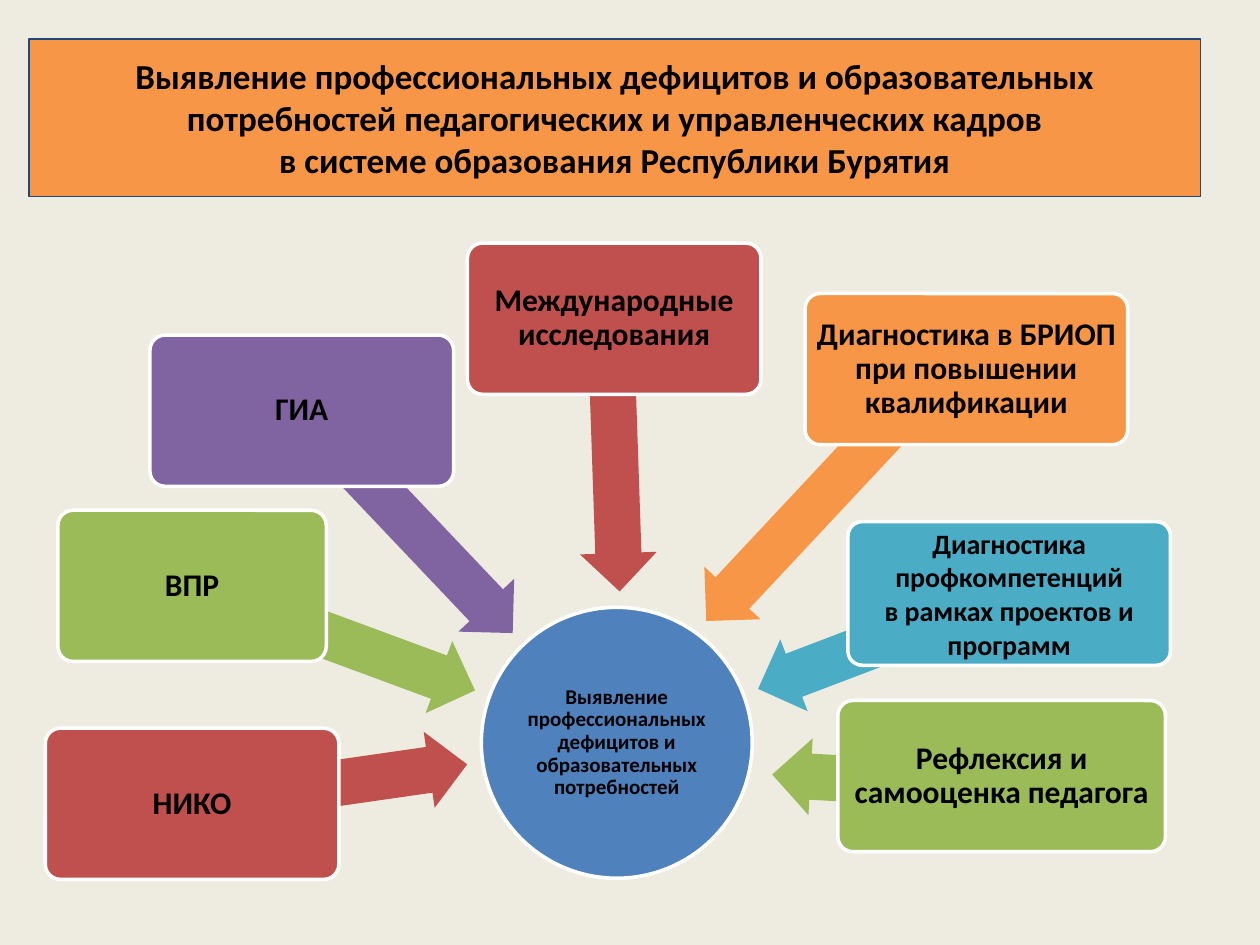
import math
from typing import NamedTuple

import pptx
import pptx.dml.color
import pptx.enum.shapes
import pptx.enum.text
import pptx.util

SHAPES = pptx.enum.shapes.MSO_SHAPE
CELL = 0.1
COLUMNS, ROWS = 100, 75
ARROW_WIDTH = 6.1
RING_RADIUS = 12

BLACK, WHITE, NAVY, CREAM = "000000", "FFFFFF", "1F497D", "EEECE1"
BLUE, RED, GREEN = "4F81BD", "C0504D", "9BBB59"
PURPLE, TEAL, ORANGE = "8064A2", "4BACC6", "F79646"

TITLE = (
    "Выявление профессиональных дефицитов и образовательных потребностей "
    "педагогических и управленческих кадров\vв системе образования Республики Бурятия"
)
HUB_TEXT = "Выявление профессиональных дефицитов и образовательных потребностей"


class Box(NamedTuple):
    """A rectangle measured in grid cells."""

    left: float
    top: float
    width: float
    height: float

    def inside(self, parent):
        """Return this box moved to the origin of its parent."""
        return self._replace(left=parent.left + self.left, top=parent.top + self.top)

    def center(self):
        """Return the middle point of the box."""
        return self.left + self.width / 2, self.top + self.height / 2


class Source(NamedTuple):
    """A card feeding the hub, with the shift and turn of its arrow."""

    text: str
    box: Box
    color: str
    format: dict = {}
    shift: tuple = (0, 0)
    turn: float = 0


TITLE_BOX = Box(2.3, 3.1, 93, 12.5)
DIAGRAM_BOX = Box(3.6, 19.3, 89.3, 50.5)
HUB_BOX = Box(34.6, 28.9, 21.5, 21.5)

SOURCES = [
    Source("НИКО", Box(0, 38.5, 23.3, 12), RED),
    Source("ВПР", Box(1, 21.2, 21.3, 12), GREEN),
    Source("ГИА", Box(8.3, 7.3, 24.1, 12), PURPLE),
    Source(
        "Диагностика профкомпетенций\nв рамках проектов и программ",
        Box(63.7, 22.1, 25.6, 11.4), TEAL,
        {"size": 16, "spacing": 1.0, "inset": 0.03},
    ),
    Source(
        "Диагностика в БРИОП при повышении квалификации",
        Box(60.3, 4, 25.6, 12), ORANGE, shift=(-1.1, -0.9),
    ),
    Source("Международные исследования", Box(33.5, 0, 23.3, 12), RED, turn=-1.6),
    Source(
        "Рефлексия и самооценка педагога",
        Box(62.9, 36.3, 26, 12), GREEN, shift=(0.4, 1.2), turn=-1.8,
    ),
]


def rgb(value):
    """Turn a hex string into a colour."""
    return pptx.dml.color.RGBColor.from_string(value)


def cells(value):
    """Turn grid cells into a length."""
    return pptx.util.Inches(value * CELL)


def set_attributes(target, values):
    """Set each named attribute of an object."""
    for name, value in values.items():
        setattr(target, name, value)


def add_shape(slide, kind, box, color, line=None, adjustments=()):
    """Add a filled preset shape, with an outline if a colour and width are given."""
    shape = slide.shapes.add_shape(kind, *map(cells, box))
    shape.shadow.inherit = False
    shape.fill.solid()
    shape.fill.fore_color.rgb = rgb(color)
    if line:
        shape.line.color.rgb = rgb(line[0])
        shape.line.width = pptx.util.Pt(line[1])
    else:
        shape.line.fill.background()
    for index, value in enumerate(adjustments):
        shape.adjustments[index] = value
    return shape


def write_text(shape, text, size=18, spacing=0.9, inset=0.04):
    """Write bold centred text into a shape."""
    frame = shape.text_frame
    sides = ("margin_left", "margin_top", "margin_right", "margin_bottom")
    set_attributes(frame, dict.fromkeys(sides, pptx.util.Inches(inset)))
    set_attributes(frame, {
        "word_wrap": True,
        "vertical_anchor": pptx.enum.text.MSO_ANCHOR.MIDDLE,
        "text": text,
    })
    for paragraph in frame.paragraphs:
        set_attributes(paragraph, {
            "alignment": pptx.enum.text.PP_ALIGN.CENTER,
            "line_spacing": spacing,
        })
        set_attributes(paragraph.font, {
            "name": "Calibri", "size": pptx.util.Pt(size), "bold": True,
        })
        paragraph.font.color.rgb = rgb(BLACK)


def add_title(slide, box):
    """Place the title banner."""
    banner = add_shape(slide, SHAPES.RECTANGLE, box, ORANGE, (NAVY, 0.75))
    write_text(banner, TITLE, size=20, spacing=1.0, inset=0.1)


def add_hub(slide, box):
    """Place the central circle."""
    hub = add_shape(slide, SHAPES.OVAL, box, BLUE, (WHITE, 2))
    write_text(hub, HUB_TEXT, size=12, inset=0.01)


def add_arrow(slide, source, card_box, hub_box):
    """Run an arrow from the card's centre to the ring around the hub."""
    (start_x, start_y), (hub_x, hub_y) = card_box.center(), hub_box.center()
    run, drop = hub_x - start_x, hub_y - start_y
    distance = math.hypot(run, drop)
    length = distance - RING_RADIUS
    share = length / distance / 2
    middle_x = start_x + run * share + source.shift[0]
    middle_y = start_y + drop * share + source.shift[1]
    box = Box(middle_x - length / 2, middle_y - ARROW_WIDTH / 2, length, ARROW_WIDTH)
    arrow = add_shape(slide, SHAPES.LEFT_ARROW, box, source.color, adjustments=(0.6, 0.5))
    arrow.rotation = math.degrees(math.atan2(drop, run)) + 180 + source.turn


def add_source(slide, source, card_box, hub_box):
    """Place one card and its arrow."""
    add_arrow(slide, source, card_box, hub_box)
    card = add_shape(
        slide, SHAPES.ROUNDED_RECTANGLE, card_box, source.color, (WHITE, 2), (0.1,)
    )
    write_text(card, source.text, **source.format)


def add_diagram(slide, box):
    """Place the hub and the cards pointing at it."""
    hub_box = HUB_BOX.inside(box)
    add_hub(slide, hub_box)
    for source in SOURCES:
        add_source(slide, source, source.box.inside(box), hub_box)


def main():
    """Build and save the presentation."""
    presentation = pptx.Presentation()
    set_attributes(presentation, {
        "slide_width": cells(COLUMNS), "slide_height": cells(ROWS),
    })
    slide = presentation.slides.add_slide(presentation.slide_layouts[6])
    slide.background.fill.solid()
    slide.background.fill.fore_color.rgb = rgb(CREAM)
    add_title(slide, TITLE_BOX)
    add_diagram(slide, DIAGRAM_BOX)
    presentation.save("out.pptx")


if __name__ == "__main__":
    main()
